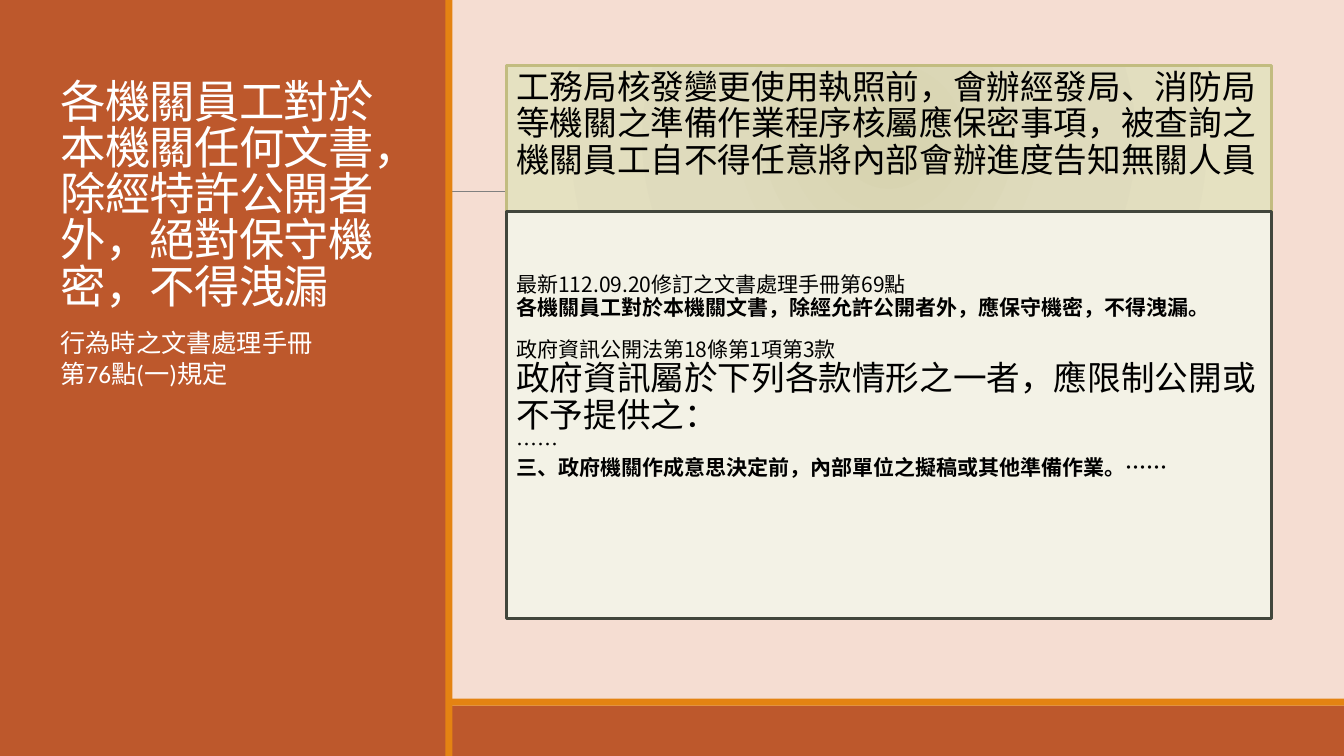
"""Build a slide on the duty to keep agency documents secret."""
from dataclasses import dataclass

from pptx import Presentation
from pptx.dml.color import RGBColor
from pptx.enum.shapes import MSO_CONNECTOR, MSO_SHAPE
from pptx.enum.text import MSO_ANCHOR, MSO_AUTO_SIZE, PP_ALIGN
from pptx.oxml import parse_xml
from pptx.oxml.ns import nsdecls, qn
from pptx.util import Inches, Pt

RECT, LINE = MSO_SHAPE.RECTANGLE, MSO_CONNECTOR.STRAIGHT
TOP, BOTTOM = MSO_ANCHOR.TOP, MSO_ANCHOR.BOTTOM
FIXED, LEFT = MSO_AUTO_SIZE.NONE, PP_ALIGN.LEFT
WIDE, HIGH = Inches(13.33), Inches(7.5)
HEX = {
    "page": "F5DDD2", "rust": "BD582C", "gold": "E48312", "rule": "808080",
    "white": "FFFFFF", "black": "000000", "olive": "C2BC80",
    "cream": "F3F2E6", "dark": "41463C",
}
STOPS = ((0, "D7D3AF"), (45, "DFDBBD"), (100, "E5E1C1"))


@dataclass
class Box:
    """Place in percent of the slide's width and height."""
    x: float
    y: float
    w: float
    h: float


@dataclass
class Bar:
    box: Box
    hue: str


@dataclass
class Para:
    text: str
    before: float = 0
    after: float = 0
    bold: tuple = (False,)


@dataclass
class Block:
    slot: int
    box: Box
    size: float
    hue: str
    paras: list
    font: str = "Calibri"
    lead: float = 1
    anchor: int = TOP
    pad: tuple = (0.1, 0.05, 0.1)
    fill: str = ""
    edge: str = ""
    track: int = 0


BARS = [
    Bar(Box(0, 93.33, 100, 6.67), "rust"),
    Bar(Box(0, 92.4, 100, 0.93), "gold"),
    Bar(Box(0, 0, 33.2, 100), "rust"),
    Bar(Box(33.13, 0, 0.53, 100), "gold"),
]
RULE = Box(9.83, 25.33, 81.77, 0)
BLOCKS = [
    Block(0, Box(3.75, 8.67, 26.25, 33.33), 32.4, "white",
          [Para("各機關員工對於本機關任何文書，除經特許公開者外，絕對保守機密，不得洩漏")],
          lead=0.85, anchor=BOTTOM, track=-50),
    Block(1, Box(37.66, 8.67, 56.95, 19.33), 24, "black",
          [Para("工務局核發變更使用執照前，會辦經發局、消防局等機關之準備作業程序核屬"
                "應保密事項，被查詢之機關員工自不得任意將內部會辦進度告知無關人員", 12, 2)],
          lead=0.9, pad=(0.1, 0.05, 0), fill="fade", edge="olive"),
    Block(3, Box(3.75, 42.67, 26.25, 49.33), 18, "white",
          [Para("行為時之文書處理手冊"), Para("第76點(一)規定")]),
    Block(2, Box(37.66, 28, 56.95, 53.87), 15, "black",
          [Para("最新112.09.20修訂之文書處理手冊第69點\v"
                "各機關員工對於本機關文書，除經允許公開者外，應保守機密，不得洩漏。",
                0, 2, (False, True)),
           Para("政府資訊公開法第18條第1項第3款\v"
                "政府資訊屬於下列各款情形之一者，應限制公開或不予提供之：", 12),
           Para("……"),
           Para("三、政府機關作成意思決定前，內部單位之擬稿或其他準備作業。……",
                bold=(True,))],
          font="Noto Sans CJK SC", lead=0.9, pad=(0.1, 0.62, 0.1),
          fill="cream", edge="dark"),
]


def tone(name: str) -> RGBColor:
    return RGBColor.from_string(HEX[name])


def span(box: Box) -> tuple:
    return (int(WIDE * box.x / 100), int(HIGH * box.y / 100),
            int(WIDE * box.w / 100), int(HIGH * box.h / 100))


def draw_bar(slide, bar: Bar) -> None:
    shape = slide.shapes.add_shape(RECT, *span(bar.box))
    shape.shadow.inherit = False
    shape.fill.solid()
    shape.fill.fore_color.rgb = tone(bar.hue)
    shape.line.fill.background()


def draw_rule(slide, box: Box) -> None:
    x, y, w, h = span(box)
    line = slide.shapes.add_connector(LINE, x, y, x + w, y + h)
    line.line.color.rgb = tone("rule")
    line.line.width = Pt(0.5)
    line.element.spPr.append(parse_xml(f"<a:effectLst {nsdecls('a')}/>"))


def fade(shape) -> None:
    shape.fill.gradient()
    old = shape.element.spPr.find(qn("a:gradFill"))
    stops = "".join(f'<a:gs pos="{pos * 1000}"><a:srgbClr val="{hue}"/></a:gs>'
                    for pos, hue in STOPS)
    sides = " ".join(f'{side}="100000"' for side in "ltrb")
    new = parse_xml(f'<a:gradFill {nsdecls("a")}><a:gsLst>{stops}</a:gsLst>'
                    f'<a:path path="circle"><a:fillToRect {sides}/></a:path></a:gradFill>')
    old.getparent().replace(old, new)


def write(part, para: Para, block: Block) -> None:
    part.text = para.text
    part.alignment = LEFT
    part.line_spacing = block.lead
    part.space_before, part.space_after = Pt(para.before), Pt(para.after)
    props = part._p.get_or_add_pPr()
    props.set("marL", "0")
    props.set("indent", "0")
    props.append(parse_xml(f"<a:buNone {nsdecls('a')}/>"))
    for run, bold in zip(part.runs, para.bold):
        font = run.font
        font.name, font.size, font.bold = block.font, Pt(block.size), bold
        font.color.rgb = tone(block.hue)
        if block.track:
            font._element.set("spc", str(block.track))


def draw_block(slide, block: Block) -> None:
    shape = slide.placeholders[block.slot]
    slide.shapes.element.append(shape.element)
    shape.left, shape.top, shape.width, shape.height = span(block.box)
    if block.fill == "fade":
        fade(shape)
    elif block.fill:
        shape.fill.solid()
        shape.fill.fore_color.rgb = tone(block.fill)
    if block.edge:
        shape.line.color.rgb = tone(block.edge)
        shape.line.width = Pt(2.25)
    frame = shape.text_frame
    frame.word_wrap, frame.auto_size = True, FIXED
    frame.vertical_anchor = block.anchor
    frame.margin_left, frame.margin_top, frame.margin_right = map(Inches, block.pad)
    for i, para in enumerate(block.paras):
        write(frame.add_paragraph() if i else frame.paragraphs[0], para, block)


def main() -> None:
    deck = Presentation()
    deck.slide_width, deck.slide_height = WIDE, HIGH
    slide = deck.slides.add_slide(deck.slide_layouts[4])
    slide.background.fill.solid()
    slide.background.fill.fore_color.rgb = tone("page")
    spare = slide.placeholders[4].element
    spare.getparent().remove(spare)
    for bar in BARS[:2]:
        draw_bar(slide, bar)
    draw_rule(slide, RULE)
    for bar in BARS[2:]:
        draw_bar(slide, bar)
    for block in BLOCKS:
        draw_block(slide, block)
    deck.save("out.pptx")


if __name__ == "__main__":
    main()
